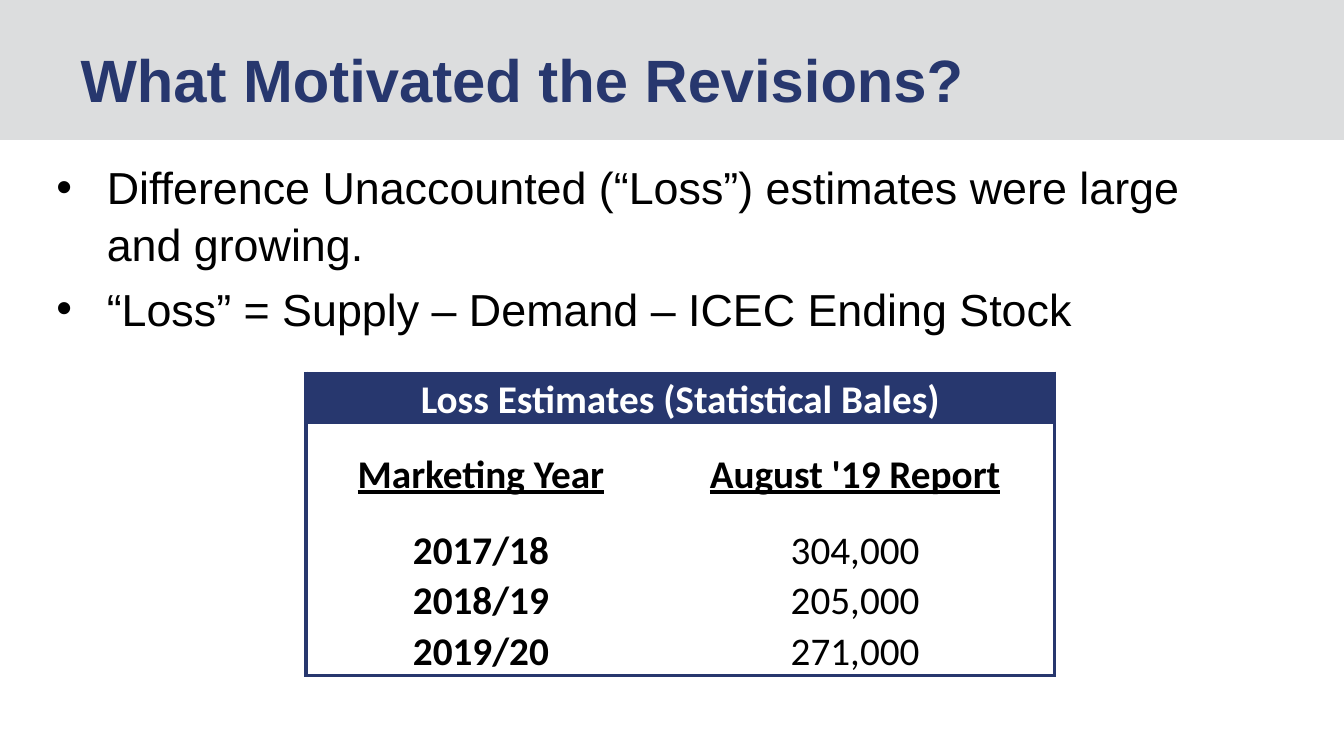
from lxml.etree import SubElement
from pptx import Presentation
from pptx.dml.color import RGBColor
from pptx.enum.shapes import MSO_SHAPE
from pptx.enum.text import MSO_ANCHOR, MSO_AUTO_SIZE, PP_ALIGN
from pptx.oxml.ns import qn
from pptx.util import Pt

NAVY, GREY, BLACK, WHITE = "27376E", "DCDDDE", "000000", "FFFFFF"
BULLETS = ["Difference Unaccounted (“Loss”) estimates were large and growing.",
           "“Loss” = Supply – Demand – ICEC Ending Stock"]
LOSSES = [("Marketing Year", "August '19 Report"), ("2017/18", "304,000"),
          ("2018/19", "205,000"), ("2019/20", "271,000")]


def paint(fmt, colour):
    """Give a fill a solid colour."""
    fmt.solid()
    fmt.fore_color.rgb = RGBColor.from_string(colour)


def place(sp, box):
    """Move a shape to a box given in points."""
    sp.left, sp.top, sp.width, sp.height = map(Pt, box)


def add_run(p, text, font, size, colour, bold=False, underline=False):
    """Append a formatted run to a paragraph."""
    r = p.add_run()
    r.text = text
    r.font.name, r.font.size = font, Pt(size)
    r.font.bold, r.font.underline = bold, underline
    r.font.color.rgb = RGBColor.from_string(colour)


def add_band(s, box):
    """Draw the header band behind everything else."""
    sp = s.shapes.add_shape(MSO_SHAPE.RECTANGLE, *map(Pt, box))
    sp.shadow.inherit = False
    paint(sp.fill, GREY)
    sp.line.fill.background()
    s.shapes._spTree.insert(2, sp._element)


def fill_title(sp, box, text):
    """Place and write the slide title."""
    place(sp, box)
    tf = sp.text_frame
    tf.auto_size, tf.vertical_anchor = MSO_AUTO_SIZE.NONE, MSO_ANCHOR.MIDDLE
    p = tf.paragraphs[0]
    p.alignment = PP_ALIGN.LEFT
    add_run(p, text, "Arial", 32, NAVY, bold=True)


def fill_body(sp, box, items):
    """Place and write the bulleted list."""
    place(sp, box)
    tf = sp.text_frame
    tf.auto_size, tf.vertical_anchor = MSO_AUTO_SIZE.NONE, MSO_ANCHOR.TOP
    for i, item in enumerate(items):
        p = tf.add_paragraph() if i else tf.paragraphs[0]
        p.line_spacing = 1.05
        p.space_before = Pt(4.8 if i else 0)
        pPr = p._p.get_or_add_pPr()
        pPr.set("marL", str(Pt(27)))
        pPr.set("indent", str(Pt(-27)))
        SubElement(pPr, qn("a:buFont"), typeface="Arial")
        SubElement(pPr, qn("a:buChar"), char="•")
        add_run(p, item, "Arial", 24, BLACK)


def format_cell(cell, text, sides, anchor=MSO_ANCHOR.BOTTOM, fill=None, **style):
    """Write a centred cell and rule the given sides in navy."""
    cell.margin_left = cell.margin_right = cell.margin_top = Pt(0.7)
    cell.margin_bottom = Pt(0)
    cell.vertical_anchor = anchor
    p = cell.text_frame.paragraphs[0]
    p.alignment = PP_ALIGN.CENTER
    add_run(p, text, "Calibri", 21, **style)
    tcPr = cell._tc.get_or_add_tcPr()
    for side in "LRTB":
        ruled = side in sides
        ln = SubElement(tcPr, qn(f"a:ln{side}"), w=str(Pt(2.25) if ruled else 0))
        line = SubElement(ln, qn("a:solidFill" if ruled else "a:noFill"))
        if ruled:
            SubElement(line, qn("a:srgbClr"), val=NAVY)
    if fill:
        paint(cell.fill, fill)
    else:
        cell.fill.background()


def add_loss_table(s, box, heading, rows):
    """Build the loss table with a merged heading row."""
    left, top, width, height = box
    unit = height / (len(rows) + 2)
    table = s.shapes.add_table(len(rows) + 1, 2, *map(Pt, box)).table
    table.first_row = table.horz_banding = False
    for col, share in zip(table.columns, (0.467, 0.533)):
        col.width = Pt(round(width * share, 2))
    for i, row in enumerate(table.rows):
        row.height = Pt(unit * (2 if i == 1 else 1))
    table.cell(0, 0).merge(table.cell(0, 1))
    format_cell(table.cell(0, 0), heading, "LTR", fill=NAVY, colour=WHITE, bold=True)
    for i, texts in enumerate(rows, 1):
        head = i == 1
        for j, text in enumerate(texts):
            sides = "LR"[j] + ("B" if i == len(rows) else "")
            format_cell(table.cell(i, j), text, sides,
                        MSO_ANCHOR.MIDDLE if head else MSO_ANCHOR.BOTTOM,
                        colour=BLACK, bold=head or j == 0, underline=head)


def main():
    """Build and save the slide."""
    prs = Presentation()
    prs.slide_width, prs.slide_height = Pt(720), Pt(405)
    s = prs.slides.add_slide(prs.slide_layouts[1])
    paint(s.background.fill, WHITE)
    add_band(s, (0, 0, 720, 75))
    fill_title(s.shapes.title, (36, 16.8, 604, 51), "What Motivated the Revisions?")
    fill_body(s.placeholders[1], (23, 80.6, 648, 281.5), BULLETS)
    add_loss_table(s, (164, 200, 401, 162), "Loss Estimates (Statistical Bales)", LOSSES)
    prs.save("out.pptx")


if __name__ == "__main__":
    main()
